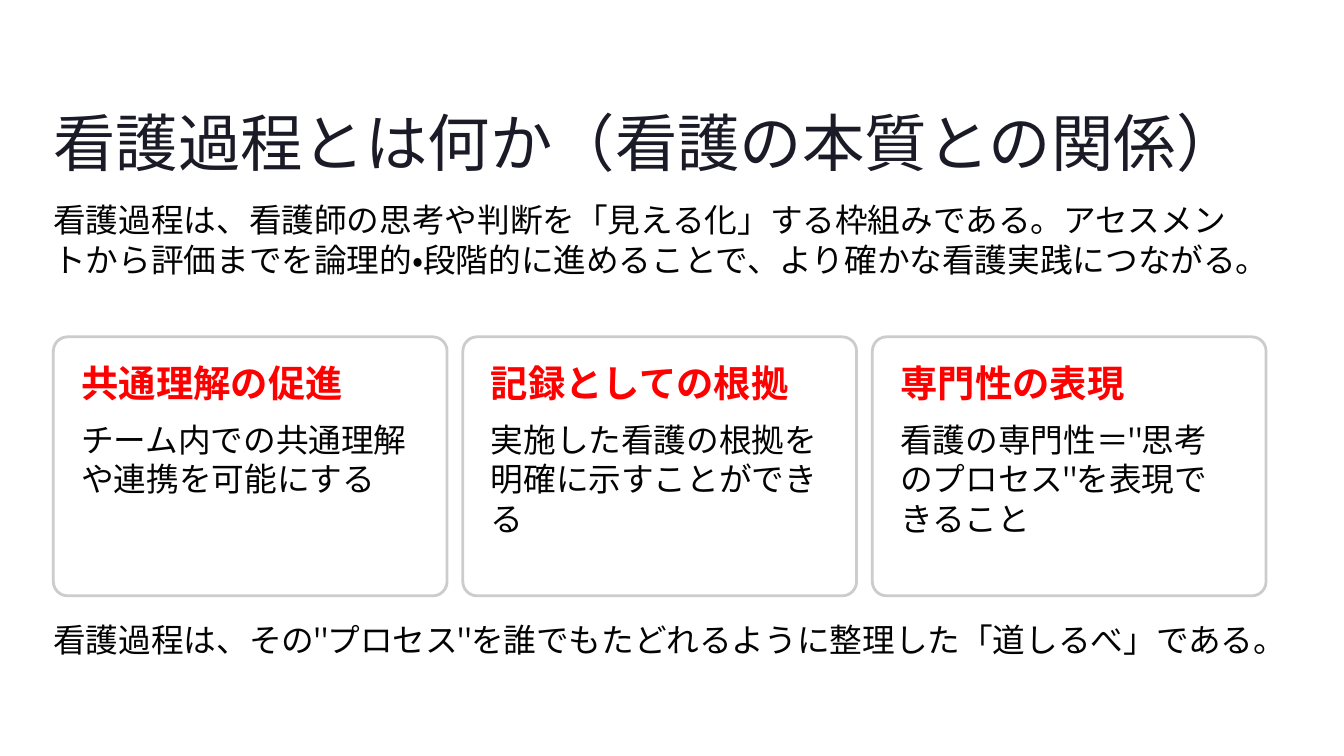
import dataclasses

import lxml.etree
import pptx
import pptx.dml.color
import pptx.enum.lang
import pptx.enum.shapes
import pptx.enum.text
import pptx.oxml.ns
import pptx.util

PX = 9525
LEFT = 61
CARD_TOP, CARD_WIDTH, CARD_HEIGHT, CARD_PITCH = 385, 450, 296, 468
CARD_PAD = 32
CARDS = [
    ("共通理解の促進", "チーム内での共通理解や連携を可能にする"),
    ("記録としての根拠", "実施した看護の根拠を明確に示すことができる"),
    ("専門性の表現", "看護の専門性＝\"思考のプロセス\"を表現できること"),
]


@dataclasses.dataclass(frozen=True)
class TextStyle:
    font: str
    size: float
    leading: float
    color: str
    bold: bool = False


@dataclasses.dataclass(frozen=True)
class Theme:
    title: TextStyle = TextStyle("Inter", 53.5, 67, "1B1B27")
    heading: TextStyle = TextStyle("Inter", 32, 33.5, "FF0000", True)
    body: TextStyle = TextStyle("Cabin", 28, 34, "030303")
    card_fill: str = "FFFFFF"
    card_opacity: int = 95
    card_line: str = "CCCCCC"
    card_line_width: float = 2.4
    card_radius: float = 0.055


THEME = Theme()


def px(*values):
    return [pptx.util.Emu(v * PX) for v in values]


def rgb(value):
    return pptx.dml.color.RGBColor.from_string(value)


def apply(obj, values):
    for name, value in values.items():
        setattr(obj, name, value)


def format_text(sp, text, style, wrap):
    tf = sp.text_frame
    apply(tf, {
        "margin_left": 0, "margin_top": 0, "margin_right": 0, "margin_bottom": 0,
        "auto_size": pptx.enum.text.MSO_AUTO_SIZE.NONE,
        "vertical_anchor": pptx.enum.text.MSO_ANCHOR.TOP,
        "word_wrap": wrap,
    })
    p = tf.paragraphs[0]
    apply(p, {
        "alignment": pptx.enum.text.PP_ALIGN.LEFT,
        "line_spacing": pptx.util.Pt(style.leading),
    })
    r = p.add_run()
    r.text = text
    apply(r.font, {
        "name": style.font, "size": pptx.util.Pt(style.size), "bold": style.bold,
        "language_id": pptx.enum.lang.MSO_LANGUAGE_ID.JAPANESE,
    })
    r.font.color.rgb = rgb(style.color)


def add_title(s, text, box):
    sp = s.shapes.title
    apply(sp, dict(zip(("left", "top", "width", "height"), px(*box))))
    format_text(sp, text, THEME.title, False)


def add_text(s, text, box, style, wrap=True):
    sp = s.shapes.add_textbox(*px(*box))
    format_text(sp, text, style, wrap)


def add_card(s, left, heading, description):
    sp = s.shapes.add_shape(
        pptx.enum.shapes.MSO_SHAPE.ROUNDED_RECTANGLE,
        *px(left, CARD_TOP, CARD_WIDTH, CARD_HEIGHT))
    sp.adjustments[0] = THEME.card_radius
    sp.shadow.inherit = False
    sp.fill.solid()
    sp.fill.fore_color.rgb = rgb(THEME.card_fill)
    color = sp.fill._xPr.find(".//" + pptx.oxml.ns.qn("a:srgbClr"))
    alpha = lxml.etree.SubElement(color, pptx.oxml.ns.qn("a:alpha"))
    alpha.set("val", str(THEME.card_opacity * 1000))
    sp.line.color.rgb = rgb(THEME.card_line)
    sp.line.width = pptx.util.Pt(THEME.card_line_width)
    x = left + CARD_PAD
    add_text(s, heading, (x, CARD_TOP + 33, 367, 60), THEME.heading, False)
    add_text(s, description, (x, CARD_TOP + 94, 385, 125), THEME.body)


def main():
    """Build the slide on the nursing process and save it."""
    prs = pptx.Presentation()
    prs.slide_width, prs.slide_height = px(1536, 864)
    s = prs.slides.add_slide(prs.slide_layouts.get_by_name("Title Only"))
    add_title(s, "看護過程とは何か（看護の本質との関係）", (LEFT, 115, 1359, 89))
    add_text(s, "看護過程は、看護師の思考や判断を「見える化」する枠組みである。"
             "アセスメントから評価までを論理的・段階的に進めることで、"
             "より確かな看護実践につながる。", (LEFT, 228, 1376, 91), THEME.body)
    for i, (heading, description) in enumerate(CARDS):
        add_card(s, LEFT + i * CARD_PITCH, heading, description)
    add_text(s, "看護過程は、その\"プロセス\"を誰でもたどれるように整理した「道しるべ」である。",
             (LEFT, 708, 1376, 46), THEME.body, False)
    prs.save("out.pptx")


if __name__ == "__main__":
    main()
